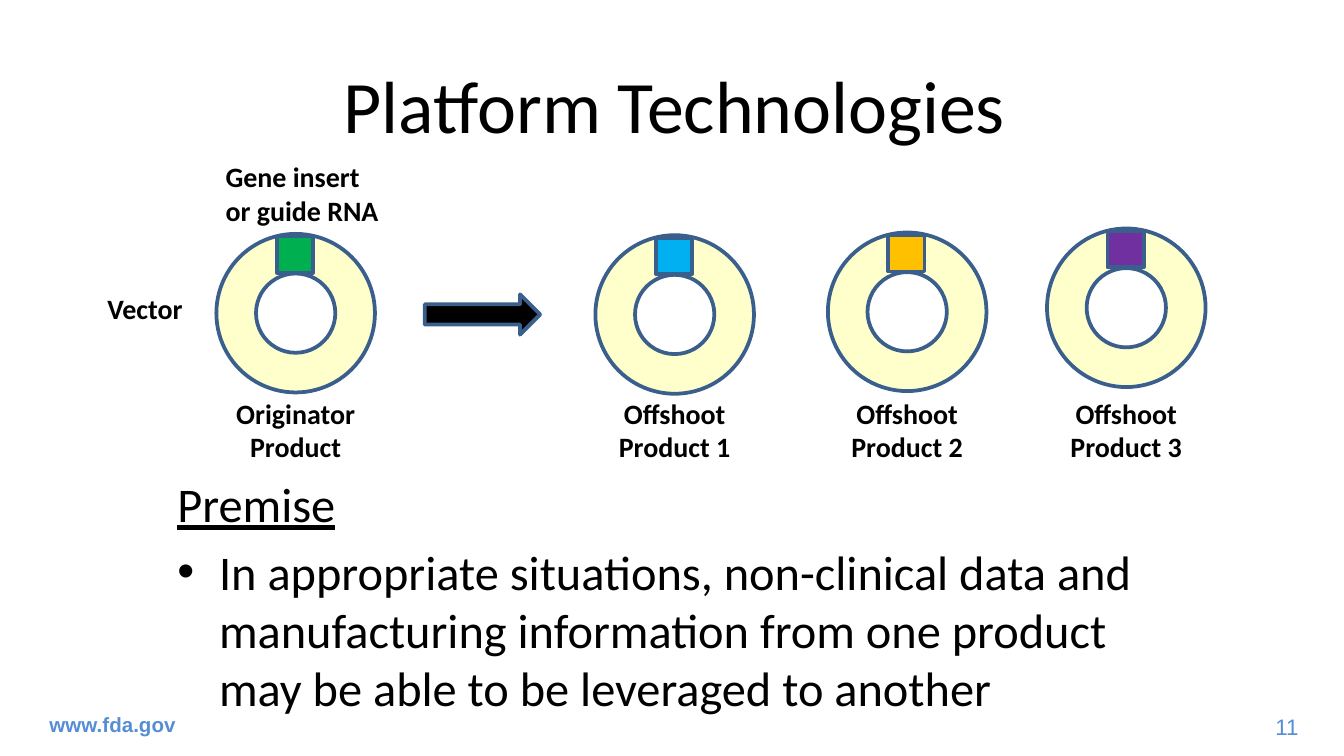
from pptx import Presentation
from pptx.dml.color import RGBColor as RGB
from pptx.enum.shapes import MSO_SHAPE as Kind
from pptx.enum.text import MSO_ANCHOR as Anchor, MSO_AUTO_SIZE as Fit, PP_ALIGN as Align
from pptx.oxml.ns import qn
from pptx.util import Inches, Pt
from lxml import etree

HUES = {
    "ink": "000000", "edge": "3A5F8C", "ring": "FFFFCC", "foot": "558ED5",
    "green": "00B050", "blue": "00B0F0", "gold": "FFC000", "plum": "7030A0",
}

deck = Presentation()
deck.slide_width, deck.slide_height = Inches(10), Inches(10 * 9 / 16)
slide = deck.slides.add_slide(deck.slide_layouts[1])


def write(box, area, lines, size, hue="ink", bold=False, face="Calibri",
          align=Align.LEFT, anchor=Anchor.TOP, wrap=True):
    box.left, box.top, box.width, box.height = map(Inches, area)
    frame = box.text_frame
    frame.text = "\n".join(lines)
    frame.word_wrap = wrap
    frame.auto_size = Fit.NONE
    frame.vertical_anchor = anchor
    for para in frame.paragraphs:
        para.alignment = align
        for run in para.runs:
            font = run.font
            font.name, font.size, font.bold = face, Pt(size), bold
            font.color.rgb = RGB.from_string(HUES[hue])
    return frame.paragraphs


def draw(kind, area, hue):
    shape = slide.shapes.add_shape(kind, *map(Inches, area))
    shape.shadow.inherit = False
    shape.fill.solid()
    shape.fill.fore_color.rgb = RGB.from_string(HUES[hue])
    shape.line.color.rgb = RGB.from_string(HUES["edge"])
    shape.line.width = Pt(2)


title, body = slide.placeholders
write(title, (2.11, 0.39, 5.82, 0.76), ["Platform Technologies"], 39.6,
      align=Align.CENTER, anchor=Anchor.MIDDLE)

head, point = write(body, (1.22, 3.48, 7.56, 1.77), [
    "Premise",
    "In appropriate situations, non-clinical data and manufacturing "
    "information from one product may be able to be leveraged to another",
], 25.9)
head.space_before, point.space_before = Pt(0), Pt(5.2)
head.runs[0].font.underline = True
for para, indent, mark in (head, 0, "buNone"), (point, 0.31, "buChar"):
    props = para._p.get_or_add_pPr()
    props.set("marL", str(Inches(indent)))
    props.set("indent", str(-Inches(indent)))
    bullet = etree.SubElement(props, qn("a:" + mark))
    if mark == "buChar":
        bullet.set("char", "•")

products = [
    (1.61, 1.74, "green", "Originator Product"),
    (4.43, 1.75, "blue", "Offshoot Product 1"),
    (6.16, 1.73, "gold", "Offshoot Product 2"),
    (7.79, 1.70, "plum", "Offshoot Product 3"),
]
for left, top, hue, name in products:
    draw(Kind.DONUT, (left, top, 1.18, 1.18), "ring")
    draw(Kind.RECTANGLE, (left + 0.45, top + 0.02, 0.27, 0.27), hue)
    label = slide.shapes.add_textbox(0, 0, 0, 0)
    write(label, (left - 0.09, 2.9, 1.36, 0.61), [name], 15, bold=True, align=Align.CENTER)

draw(Kind.RIGHT_ARROW, (3.16, 2.19, 0.86, 0.3), "ink")

notes = [
    ((0.7, 2.12, 0.77, 0.35), "Vector", 15, {"bold": True, "wrap": False}),
    ((1.58, 1.14, 1.4, 0.61), "Gene insert or guide RNA", 15, {"bold": True}),
    ((0.27, 5.24, 3.17, 0.3), "www.fda.gov", 11,
     {"hue": "foot", "bold": True, "face": "Arial", "anchor": Anchor.MIDDLE}),
    ((9.35, 5.26, 0.41, 0.3), "11", 12,
     {"hue": "foot", "face": "Arial", "align": Align.RIGHT, "wrap": False}),
]
for area, words, size, style in notes:
    write(slide.shapes.add_textbox(0, 0, 0, 0), area, [words], size, **style)

deck.save("out.pptx")
